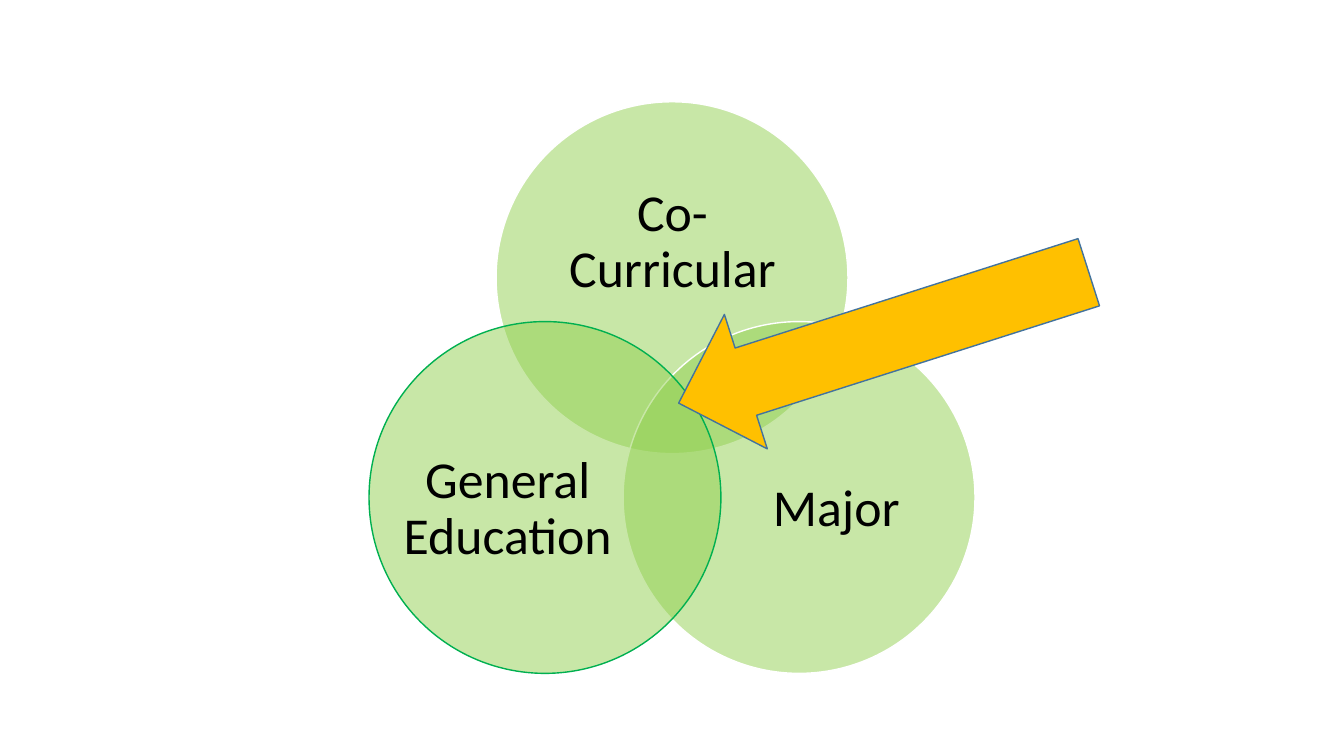
from lxml import etree
from pptx import Presentation
from pptx.dml.color import RGBColor
from pptx.enum import shapes, text
from pptx.oxml import ns
from pptx.util import Inches, Pt

GREEN = RGBColor(0x92, 0xD0, 0x50)
DARK_GREEN = RGBColor(0x00, 0xB0, 0x50)
WHITE = RGBColor(0xFF, 0xFF, 0xFF)
BLACK = RGBColor(0x00, 0x00, 0x00)
AMBER = RGBColor(0xFF, 0xC0, 0x00)
BLUE = RGBColor(0x43, 0x73, 0x9E)

DIAMETER = 3.49
# label, circle left and top, outline, label box
CIRCLES = [
    ("Co-Curricular", (4.92, 1.01), WHITE, (5.39, 1.62, 2.56, 1.57)),
    ("Major", (6.18, 3.19), WHITE, (7.25, 4.1, 2.09, 1.92)),
    ("General Education", (3.66, 3.19), DARK_GREEN, (3.99, 4.1, 2.09, 1.92)),
]
ARROW_BOX = (6.63, 2.65, 4.27, 1.4)
ARROW_ROTATION = 342.3


def add_filled(slide, preset, box, fill, outline):
    shape = slide.shapes.add_shape(preset, *map(Inches, box))
    shape.shadow.inherit = False
    shape.fill.solid()
    shape.fill.fore_color.rgb = fill
    shape.line.color.rgb = outline
    shape.line.width = Pt(1)
    return shape


def make_half_transparent(shape):
    color = shape.fill._xPr.find(ns.qn("a:solidFill"))[0]
    etree.SubElement(color, ns.qn("a:alpha"), val="50000")


def add_label(slide, label, box):
    frame = slide.shapes.add_textbox(*map(Inches, box)).text_frame
    frame.word_wrap = True
    frame.vertical_anchor = text.MSO_ANCHOR.MIDDLE
    frame.margin_left = frame.margin_right = 0
    frame.margin_top = frame.margin_bottom = 0
    paragraph = frame.paragraphs[0]
    paragraph.text = label
    paragraph.alignment = text.PP_ALIGN.CENTER
    paragraph.line_spacing = 0.9
    paragraph.space_after = Pt(13)
    paragraph.font.name = "Calibri"
    paragraph.font.size = Pt(37)
    paragraph.font.color.rgb = BLACK


def main():
    deck = Presentation()
    deck.slide_width, deck.slide_height = Inches(13.33), Inches(7.5)
    slide = deck.slides.add_slide(deck.slide_layouts[6])

    for label, corner, outline, label_box in CIRCLES:
        circle = add_filled(slide, shapes.MSO_SHAPE.OVAL,
                            (*corner, DIAMETER, DIAMETER), GREEN, outline)
        make_half_transparent(circle)
        add_label(slide, label, label_box)

    arrow = add_filled(slide, shapes.MSO_SHAPE.LEFT_ARROW, ARROW_BOX, AMBER, BLUE)
    arrow.rotation = ARROW_ROTATION
    deck.save("out.pptx")


if __name__ == "__main__":
    main()
